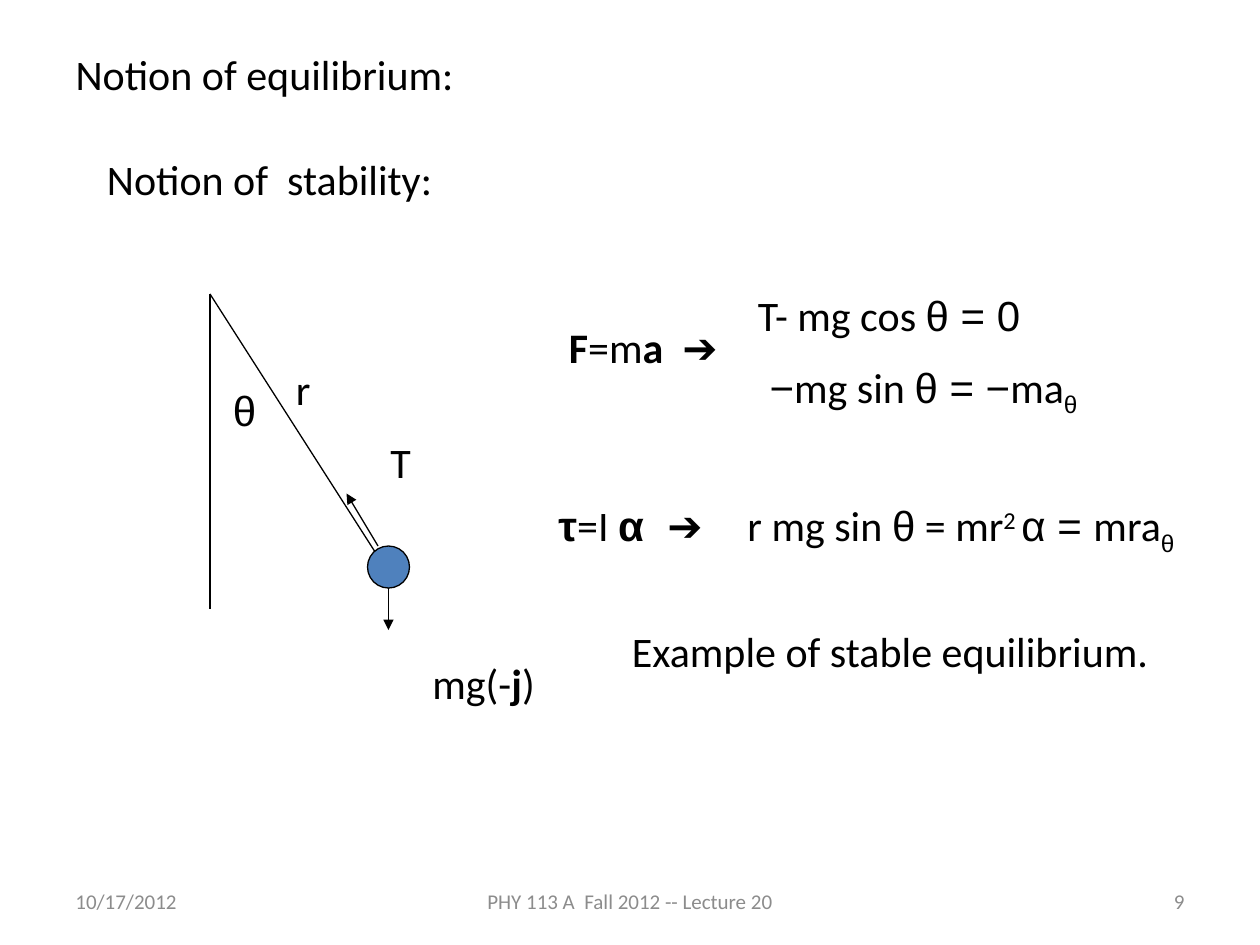
from lxml import etree
from pptx import Presentation
from pptx.dml.color import RGBColor
from pptx.enum import shapes as sh, text as tx
from pptx.oxml import ns
from pptx.util import Pt

BLACK = RGBColor(0, 0, 0)
GRAY = RGBColor(0x8C, 0x8C, 0x8C)
BLUE = RGBColor(0x4F, 0x81, 0xBD)
LEFT, MID, RIGHT = tx.PP_ALIGN.LEFT, tx.PP_ALIGN.CENTER, tx.PP_ALIGN.RIGHT
TOP, CENTER = tx.MSO_ANCHOR.TOP, tx.MSO_ANCHOR.MIDDLE
BASE = {"-": "-25000", "+": "30000"}

deck = Presentation()
deck.slide_width, deck.slide_height = Pt(720), Pt(540)
slide = deck.slides.add_slide(deck.slide_layouts[5])


def write(paras, x, y, w, h=36, box=None, size=24, color=BLACK, align=LEFT, anchor=TOP):
    """Each paragraph is a list of (text, marks): b bold, g Arial, - sub, + super."""
    box = box or slide.shapes.add_textbox(0, 0, 0, 0)
    box.left, box.top, box.width, box.height = Pt(x), Pt(y), Pt(w), Pt(h)
    frame = box.text_frame
    frame.word_wrap, frame.vertical_anchor = True, anchor
    frame.auto_size = tx.MSO_AUTO_SIZE.NONE
    for i, runs in enumerate(paras):
        para = frame.add_paragraph() if i else frame.paragraphs[0]
        para.alignment = align
        para.space_before = Pt(size / 2 if i else 0)
        for words, marks in runs:
            run = para.add_run()
            run.text = words
            font = run.font
            font.name = "Arial" if "g" in marks else "Calibri"
            font.size, font.bold = Pt(size), "b" in marks
            font.color.rgb = color
            for mark in marks:
                if mark in BASE:
                    run._r.get_or_add_rPr().set("baseline", BASE[mark])


def draw(x1, y1, x2, y2, arrow=False):
    line = slide.shapes.add_connector(sh.MSO_CONNECTOR.STRAIGHT, Pt(x1), Pt(y1), Pt(x2), Pt(y2))
    line.line.color.rgb, line.line.width = BLACK, Pt(0.75)
    if arrow:
        etree.SubElement(line.line._get_or_add_ln(), ns.qn("a:tailEnd"), type="triangle")
    etree.SubElement(line._element.spPr, ns.qn("a:effectLst"))


# Headings
write([[("Notion of equilibrium:", "")]], 36, 24, 636, box=slide.shapes.title)
write([[("Notion of  stability:", "")]], 54, 84, 600)

# Pendulum: vertical, string, bob, then the two forces
draw(120, 168, 120, 348)
draw(120, 168, 216, 318)
bob = slide.shapes.add_shape(sh.MSO_SHAPE.OVAL, Pt(210), Pt(312), Pt(24), Pt(24))
bob.shadow.inherit = False
bob.fill.solid()
bob.fill.fore_color.rgb = BLUE
bob.line.color.rgb, bob.line.width = BLACK, Pt(0.75)
draw(222, 336, 222, 360, arrow=True)
draw(216, 312, 198, 282, arrow=True)

# Pendulum labels
write([[("mg(-", ""), ("j", "b"), (")", "")]], 240, 372, 96)
write([[("r", "")]], 162, 204, 42)
write([[("T", "")]], 216, 246, 42)
write([[("θ", "g")]], 126, 216, 36)

# Force equations
write([[("F", "b"), ("=m", ""), ("a  ➔", "b")]], 318, 180, 114)
write([[("T- mg cos ", ""), ("θ = 0", "g")],
       [(" −", "g"), ("mg sin ", ""), ("θ = −", "g"), ("ma", ""), ("θ", "g-")]],
      426, 162, 228, 80)

# Torque equations
write([[("τ", "bg"), ("=I ", ""), ("α  ", "bg"), ("➔", "b")]], 312, 282, 114)
write([[("r mg sin ", ""), ("θ", "g"), (" = mr", ""), ("2 ", "+"),
        ("α = ", "g"), ("mra", ""), ("θ", "g-")]], 420, 282, 270)
write([[("Example of stable equilibrium.", "")]], 354, 354, 348)

# Footer
for words, x, w, align in (("10/17/2012", 36, 168, LEFT),
                           ("PHY 113 A  Fall 2012 -- Lecture 20", 246, 228, MID),
                           ("9", 516, 168, RIGHT)):
    write([[(words, "")]], x, 500.5, w, 28.75, size=12, color=GRAY, align=align, anchor=CENTER)

deck.save("out.pptx")
